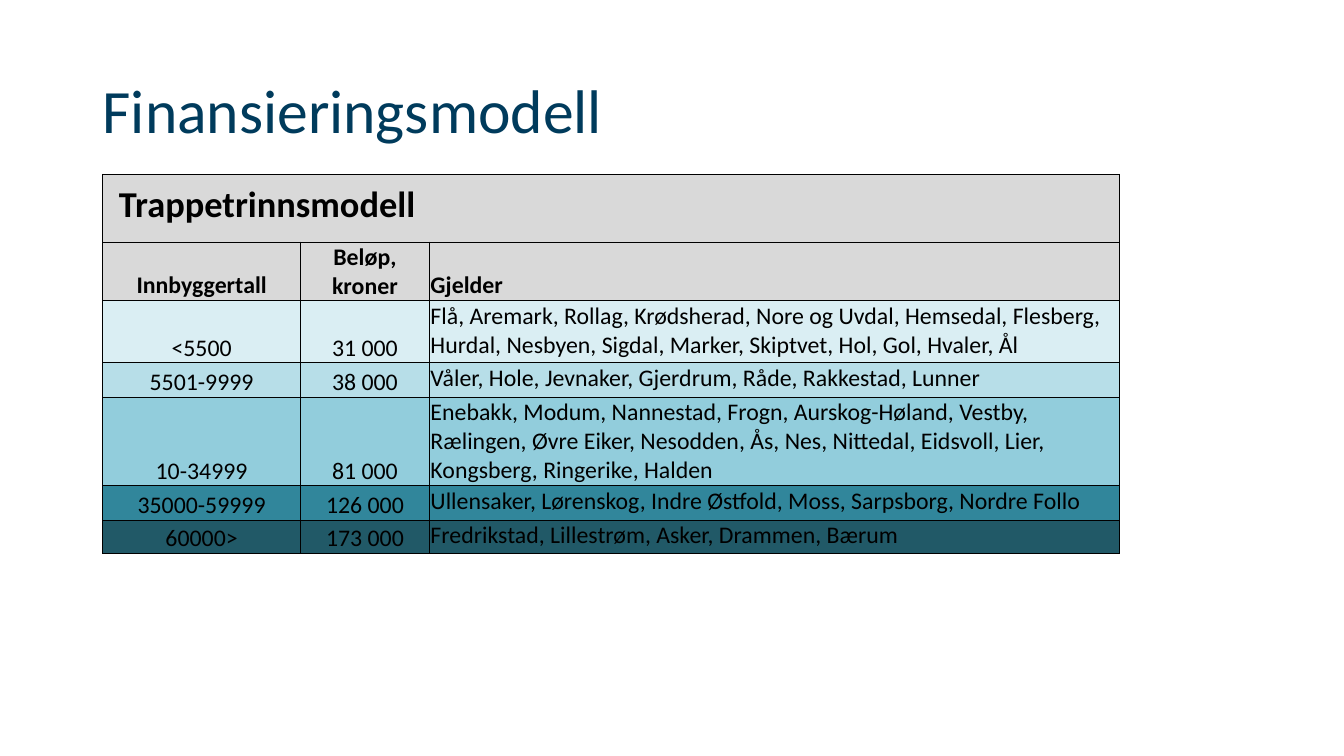
from lxml import etree
from pptx import Presentation, util as u
from pptx.dml.color import RGBColor
from pptx.enum import text
from pptx.oxml.ns import qn

FONT = "Calibri"
COLORS = {"title": "003B5C", "black": "000000", "header": "D9D9D9"}
COL_WIDTHS = [1.96, 1.28, 6.84]
ROW_HEIGHTS = [0.67, 0.58, 0.62, 0.34, 0.88, 0.34, 0.33]
HEADINGS = ["Innbyggertall", "Beløp, kroner", "Gjelder"]
# Population band, amount, municipalities, row colour
STEPS = [
    ("<5500", "31 000",
     "Flå, Aremark, Rollag, Krødsherad, Nore og Uvdal, Hemsedal, Flesberg, "
     "Hurdal, Nesbyen, Sigdal, Marker, Skiptvet, Hol, Gol, Hvaler, Ål", "DAEEF3"),
    ("5501-9999", "38 000",
     "Våler, Hole, Jevnaker, Gjerdrum, Råde, Rakkestad, Lunner", "B7DEE8"),
    ("10-34999", "81 000",
     "Enebakk, Modum, Nannestad, Frogn, Aurskog-Høland, Vestby, Rælingen, "
     "Øvre Eiker, Nesodden, Ås, Nes, Nittedal, Eidsvoll, Lier, Kongsberg, "
     "Ringerike, Halden", "92CDDC"),
    ("35000-59999", "126 000",
     "Ullensaker, Lørenskog, Indre Østfold, Moss, Sarpsborg, Nordre Follo", "31869B"),
    ("60000>", "173 000",
     "Fredrikstad, Lillestrøm, Asker, Drammen, Bærum", "215967"),
]


def add_run(p, content, size, color, bold=False):
    r = p.add_run()
    r.text = content
    r.font.name = FONT
    r.font.size = u.Pt(size)
    r.font.bold = bold
    r.font.color.rgb = RGBColor.from_string(color)


def add_title(slide, content):
    box = slide.shapes.add_textbox(u.Inches(0.92), u.Inches(0.4), u.Inches(11.5), u.Inches(1.45))
    tf = box.text_frame
    tf.word_wrap = True
    tf.vertical_anchor = text.MSO_ANCHOR.MIDDLE
    p = tf.paragraphs[0]
    p.line_spacing = 0.9
    add_run(p, content, 44, COLORS["title"])


def set_borders(cell, widths):
    tc_pr = cell._tc.get_or_add_tcPr()
    for side, width in zip("LRTB", widths):
        ln = etree.SubElement(tc_pr, qn(f"a:ln{side}"), w=str(u.Pt(width)))
        fill = etree.SubElement(ln, qn("a:solidFill"))
        etree.SubElement(fill, qn("a:srgbClr"), val=COLORS["black"])


def set_margins(cell, left, top, right, bottom):
    cell.margin_left, cell.margin_top = u.Inches(left), u.Inches(top)
    cell.margin_right, cell.margin_bottom = u.Inches(right), u.Inches(bottom)


def fill_cell(cell, content, size, align, anchor, bold):
    cell.vertical_anchor = anchor
    p = cell.text_frame.paragraphs[0]
    p.alignment = align
    add_run(p, content, size, COLORS["black"], bold)


def add_step_table(slide):
    n_rows, n_cols = len(ROW_HEIGHTS), len(COL_WIDTHS)
    table = slide.shapes.add_table(
        n_rows, n_cols, u.Inches(1.02), u.Inches(1.73),
        u.Inches(sum(COL_WIDTHS)), u.Inches(sum(ROW_HEIGHTS))).table
    for col, width in zip(table.columns, COL_WIDTHS):
        col.width = u.Inches(width)
    for row, height in zip(table.rows, ROW_HEIGHTS):
        row.height = u.Inches(height)

    # Borders (heavier on the outside), fills and margins
    fills = [COLORS["header"]] * 2 + [step[3] for step in STEPS]
    for i, color in enumerate(fills):
        for j in range(n_cols):
            cell = table.cell(i, j)
            outer = (j == 0, j == n_cols - 1, i == 0, i == n_rows - 1)
            set_borders(cell, [1 if edge else 0.5 for edge in outer])
            cell.fill.solid()
            cell.fill.fore_color.rgb = RGBColor.from_string(color)
            set_margins(cell, 0.01, 0.01, 0.01, 0)

    # Heading across all columns
    heading = table.cell(0, 0)
    heading.merge(table.cell(0, n_cols - 1))
    set_margins(heading, 0.16, 0.08, 0.16, 0.08)
    fill_cell(heading, "Trappetrinnsmodell", 26, text.PP_ALIGN.LEFT, text.MSO_ANCHOR.TOP, True)

    # Column headings and steps
    for i, values in enumerate([HEADINGS] + [step[:3] for step in STEPS], start=1):
        for j, value in enumerate(values):
            is_list = j == n_cols - 1
            align = text.PP_ALIGN.LEFT if is_list else text.PP_ALIGN.CENTER
            top = is_list and i > 1
            anchor = text.MSO_ANCHOR.TOP if top else text.MSO_ANCHOR.BOTTOM
            fill_cell(table.cell(i, j), value, 17, align, anchor, i == 1)


def main():
    prs = Presentation()
    prs.slide_width, prs.slide_height = u.Inches(13.33), u.Inches(7.5)
    slide = prs.slides.add_slide(prs.slide_layouts[6])
    add_title(slide, "Finansieringsmodell")
    add_step_table(slide)
    prs.save("out.pptx")


if __name__ == "__main__":
    main()
